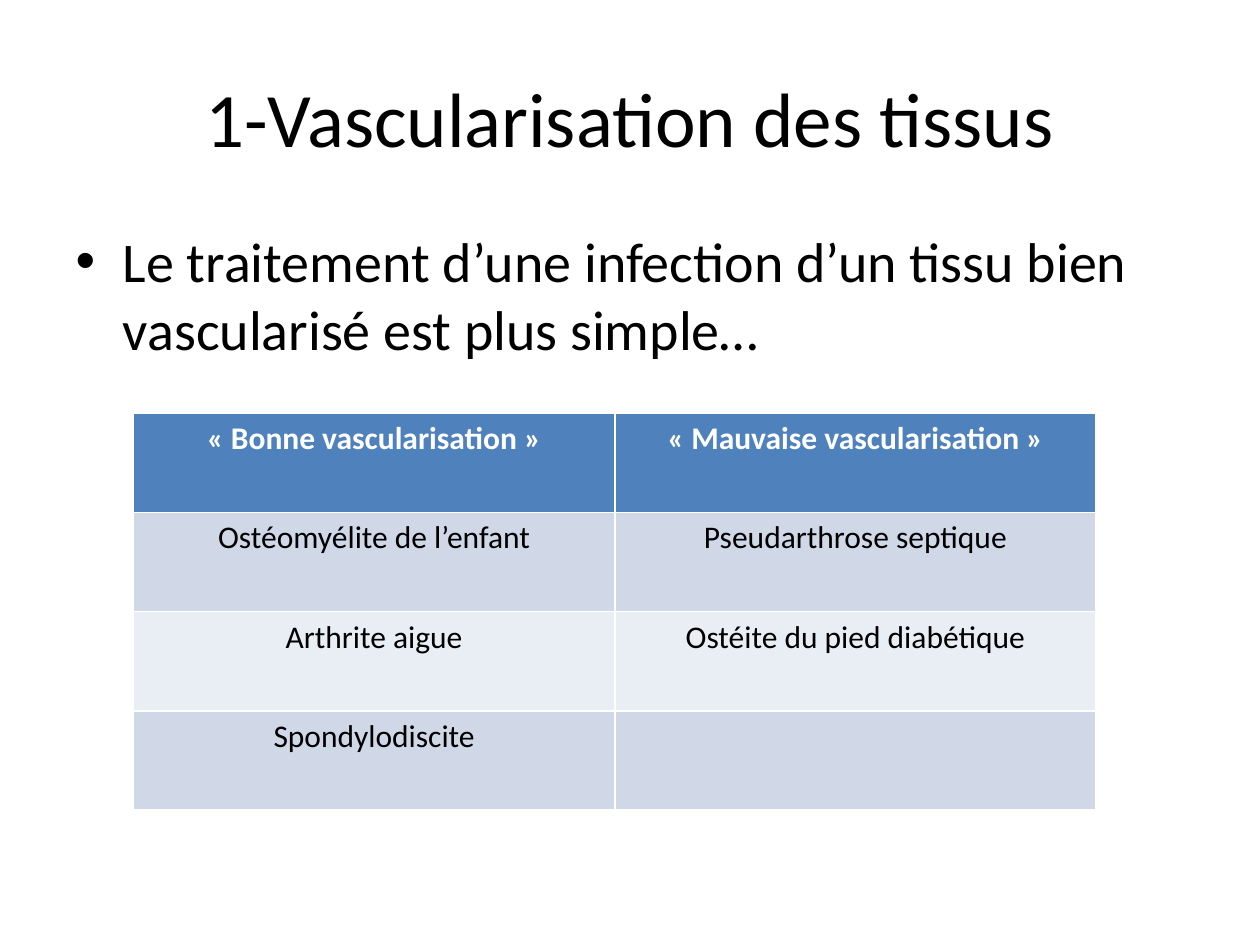
from pptx import Presentation, util as u
from pptx.dml.color import RGBColor
from pptx.enum import text

BLACK = RGBColor(0x00, 0x00, 0x00)
WHITE = RGBColor(0xFF, 0xFF, 0xFF)
HEADER_BLUE = RGBColor(0x4F, 0x81, 0xBD)
BANDS = [RGBColor(0xE9, 0xED, 0xF4), RGBColor(0xD0, 0xD8, 0xE8)]
FONT = "Calibri"

TISSUES = [
    ("« Bonne vascularisation »", "« Mauvaise vascularisation »"),
    ("Ostéomyélite de l’enfant", "Pseudarthrose septique"),
    ("Arthrite aigue", "Ostéite du pied diabétique"),
    ("Spondylodiscite", ""),
]


def style(paragraph, size, color, bold=False):
    paragraph.font.name = FONT
    paragraph.font.size = u.Pt(size)
    paragraph.font.color.rgb = color
    paragraph.font.bold = bold


prs = Presentation()
prs.slide_width, prs.slide_height = u.Inches(10), u.Inches(7.5)
slide = prs.slides.add_slide(prs.slide_layouts[1])
margin = int(prs.slide_width * 0.05)
content_width = prs.slide_width - 2 * margin

# Title
title = slide.shapes.title
title.left, title.top = margin, int(prs.slide_height * 0.04)
title.width, title.height = content_width, u.Inches(1.25)
title.text_frame.text = "1-Vascularisation des tissus"
title.text_frame.vertical_anchor = text.MSO_ANCHOR.MIDDLE
heading = title.text_frame.paragraphs[0]
heading.alignment = text.PP_ALIGN.CENTER
style(heading, 44, BLACK)

# Bulleted statement
statement = slide.placeholders[1]
statement.left, statement.top = margin, u.Inches(1.75)
statement.width, statement.height = content_width, u.Inches(4.95)
statement.text_frame.text = (
    "Le traitement d’une infection d’un tissu bien vascularisé est plus simple…"
)
style(statement.text_frame.paragraphs[0], 32, BLACK)

# Comparison table: the built-in style draws the white rules
comparison = slide.shapes.add_table(
    len(TISSUES), len(TISSUES[0]),
    u.Inches(1.06), u.Inches(3.28), u.Inches(7.64), u.Inches(3.15),
).table
for r, row in enumerate(TISSUES):
    for c, label in enumerate(row):
        cell = comparison.cell(r, c)
        cell.fill.solid()
        cell.fill.fore_color.rgb = BANDS[r % 2] if r else HEADER_BLUE
        cell.text = label
        entry = cell.text_frame.paragraphs[0]
        entry.alignment = text.PP_ALIGN.CENTER
        style(entry, 18, BLACK if r else WHITE, bold=r == 0)

prs.save("out.pptx")
